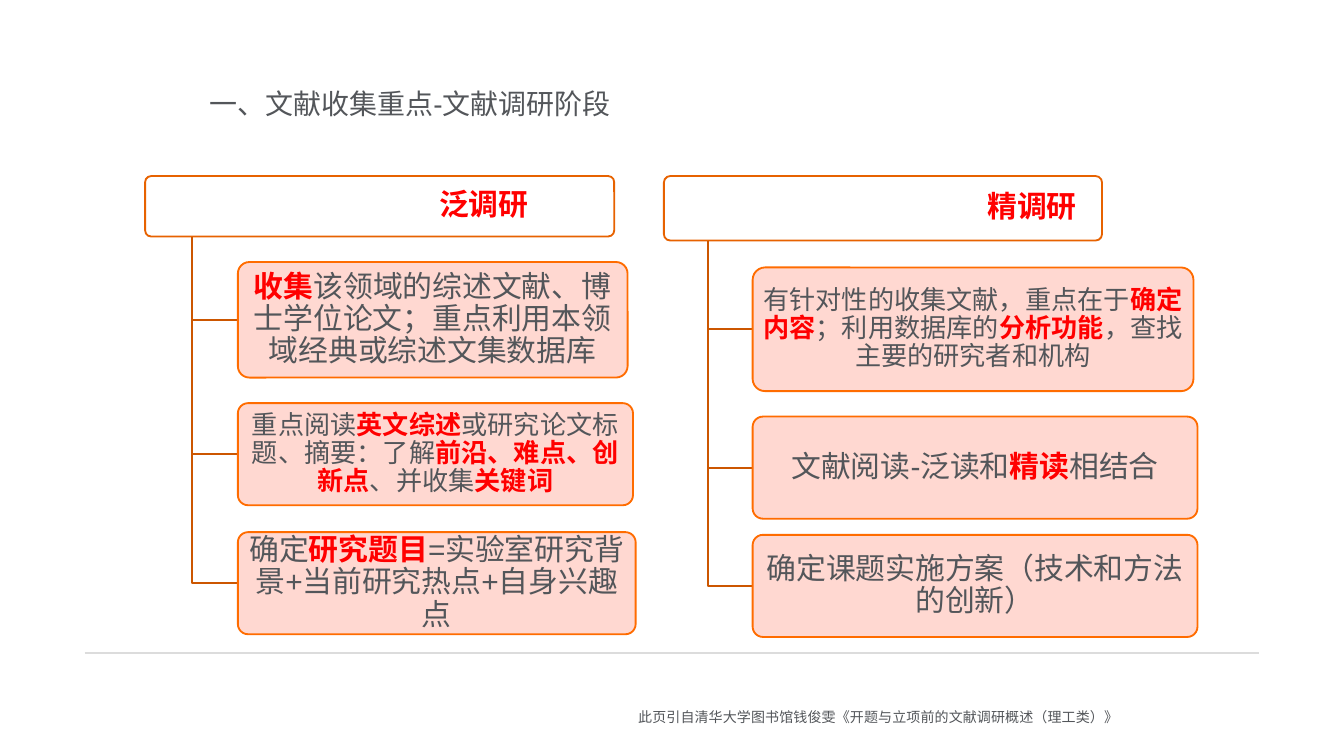
from dataclasses import dataclass

from lxml import etree
from pptx import Presentation
from pptx.dml.color import RGBColor
from pptx.enum.shapes import MSO_CONNECTOR, MSO_SHAPE
from pptx.enum.text import MSO_ANCHOR, PP_ALIGN
from pptx.oxml.ns import qn
from pptx.util import Inches, Pt

ROUNDED = MSO_SHAPE.ROUNDED_RECTANGLE
STRAIGHT = MSO_CONNECTOR.STRAIGHT
MIDDLE, TOP = MSO_ANCHOR.MIDDLE, MSO_ANCHOR.TOP
CENTER, LEFT = PP_ALIGN.CENTER, PP_ALIGN.LEFT


@dataclass(frozen=True)
class Theme:
    font: str = "Arial"
    text: str = "53565A"
    accent: str = "FF0000"
    white: str = "FFFFFF"
    header_line: str = "E76200"
    branch_line: str = "CC5600"
    box_line: str = "FF6C00"
    box_fill: str = "FFD4CC"
    rule: str = "DCDCDC"
    title_size: float = 15
    large_size: float = 16
    medium_size: float = 14
    source_size: float = 7.5


THEME = Theme()


@dataclass(frozen=True)
class Run:
    text: str
    key: bool = False


@dataclass(frozen=True)
class Box:
    top: float
    width: float
    height: float
    size: float
    runs: tuple[Run, ...]


@dataclass(frozen=True)
class Stage:
    left: float
    box_left: float
    header: Box
    header_indent: float
    boxes: tuple[Box, ...]


STAGES = (
    Stage(1.08, 1.77, Box(1.31, 3.49, 0.45, THEME.large_size, (Run("泛调研", True),)), 1.55, (
        Box(1.95, 2.9, 0.86, THEME.large_size, (
            Run("收集", True),
            Run("该领域的综述文献、博士学位论文；重点利用本领域经典或综述文集数据库"))),
        Box(3, 2.94, 0.76, THEME.medium_size, (
            Run("重点阅读"), Run("英文综述", True), Run("或研究论文标题、摘要：了解"),
            Run("前沿、难点、创新点", True), Run("、并收集"), Run("关键词", True))),
        Box(3.96, 2.96, 0.76, THEME.large_size, (
            Run("确定"), Run("研究题目", True),
            Run("=实验室研究背景+当前研究热点+自身兴趣点"))),
    )),
    Stage(4.94, 5.6, Box(1.31, 3.26, 0.48, THEME.large_size, (Run("精调研", True),)), 2.22, (
        Box(1.99, 3.28, 0.92, THEME.medium_size, (
            Run("有针对性的收集文献，重点在于"), Run("确定内容", True),
            Run("；利用数据库的"), Run("分析功能", True), Run("，查找主要的研究者和机构"))),
        Box(3.1, 3.31, 0.76, THEME.large_size, (
            Run("文献阅读-泛读和"), Run("精读", True), Run("相结合"))),
        Box(3.98, 3.31, 0.76, THEME.large_size, (
            Run("确定课题实施方案（技术和方法的创新）"),)),
    )),
)


def color(value: str) -> RGBColor:
    return RGBColor.from_string(value)


def write(shape, runs: tuple[Run, ...], size: float, alignment, anchor,
          insets: tuple[float, float, float, float], spacing: float = 1) -> None:
    frame = shape.text_frame
    frame.word_wrap = True
    frame.vertical_anchor = anchor
    (frame.margin_left, frame.margin_top,
     frame.margin_right, frame.margin_bottom) = map(Inches, insets)
    paragraph = frame.paragraphs[0]
    paragraph.alignment = alignment
    paragraph.line_spacing = spacing
    for item in runs:
        run = paragraph.add_run()
        run.text = item.text
        run.font.name = THEME.font
        run.font.size = Pt(size)
        run.font.bold = item.key
        run.font.color.rgb = color(THEME.accent if item.key else THEME.text)


def draw_box(slide, left: float, box: Box, fill: str, line: str,
             opacity: int = 100, indent: float = 0) -> None:
    shape = slide.shapes.add_shape(
        ROUNDED, Inches(left), Inches(box.top), Inches(box.width), Inches(box.height))
    shape.adjustments[0] = 0.1
    shape.shadow.inherit = False
    shape.fill.solid()
    shape.fill.fore_color.rgb = color(fill)
    if opacity < 100:
        fill_color = shape._element.spPr.find(qn("a:solidFill"))[0]
        etree.SubElement(fill_color, qn("a:alpha"), val=str(opacity * 1000))
    shape.line.color.rgb = color(line)
    shape.line.width = Pt(1)
    write(shape, box.runs, box.size, CENTER, MIDDLE, (0.03 + indent, 0.02, 0.03, 0.02), 0.9)


def draw_branch(slide, left: float, top: float, right: float, bottom: float) -> None:
    builder = slide.shapes.build_freeform(Inches(left), Inches(top))
    builder.add_line_segments(
        [(Inches(left), Inches(bottom)), (Inches(right), Inches(bottom))], close=False)
    branch = builder.convert_to_shape()
    branch.shadow.inherit = False
    branch.fill.background()
    branch.line.color.rgb = color(THEME.branch_line)
    branch.line.width = Pt(1)


def draw_stage(slide, stage: Stage) -> None:
    header = stage.header
    draw_box(slide, stage.left, header, THEME.white, THEME.header_line,
             indent=stage.header_indent)
    trunk = stage.left + header.width / 10
    for box in stage.boxes:
        draw_branch(slide, trunk, header.top + header.height,
                    stage.box_left, box.top + box.height / 2)
        draw_box(slide, stage.box_left, box, THEME.box_fill, THEME.box_line, opacity=90)


def draw_rule(slide) -> None:
    rule = slide.shapes.add_connector(
        STRAIGHT, Inches(0.63), Inches(4.86), Inches(9.37), Inches(4.86))
    rule.line.color.rgb = color(THEME.rule)
    rule.line.width = Pt(1)
    etree.SubElement(rule._element.spPr, qn("a:effectLst"))


def main() -> None:
    presentation = Presentation()
    presentation.slide_width = Inches(10)
    presentation.slide_height = Inches(10) * 9 // 16
    slide = presentation.slides.add_slide(presentation.slide_layouts[6])
    draw_rule(slide)
    title = slide.shapes.add_textbox(Inches(1.46), Inches(0.6), Inches(6.76), Inches(0.34))
    write(title, (Run("一、文献收集重点-文献调研阶段"),), THEME.title_size,
          LEFT, MIDDLE, (0.1, 0, 0.1, 0))
    for stage in STAGES:
        draw_stage(slide, stage)
    source = slide.shapes.add_textbox(Inches(4.65), Inches(5.22), Inches(3.79), Inches(0.23))
    write(source, (Run("此页引自清华大学图书馆钱俊雯《开题与立项前的文献调研概述（理工类）》"),),
          THEME.source_size, LEFT, TOP, (0.1, 0.05, 0.1, 0.05))
    presentation.save("out.pptx")


if __name__ == "__main__":
    main()
